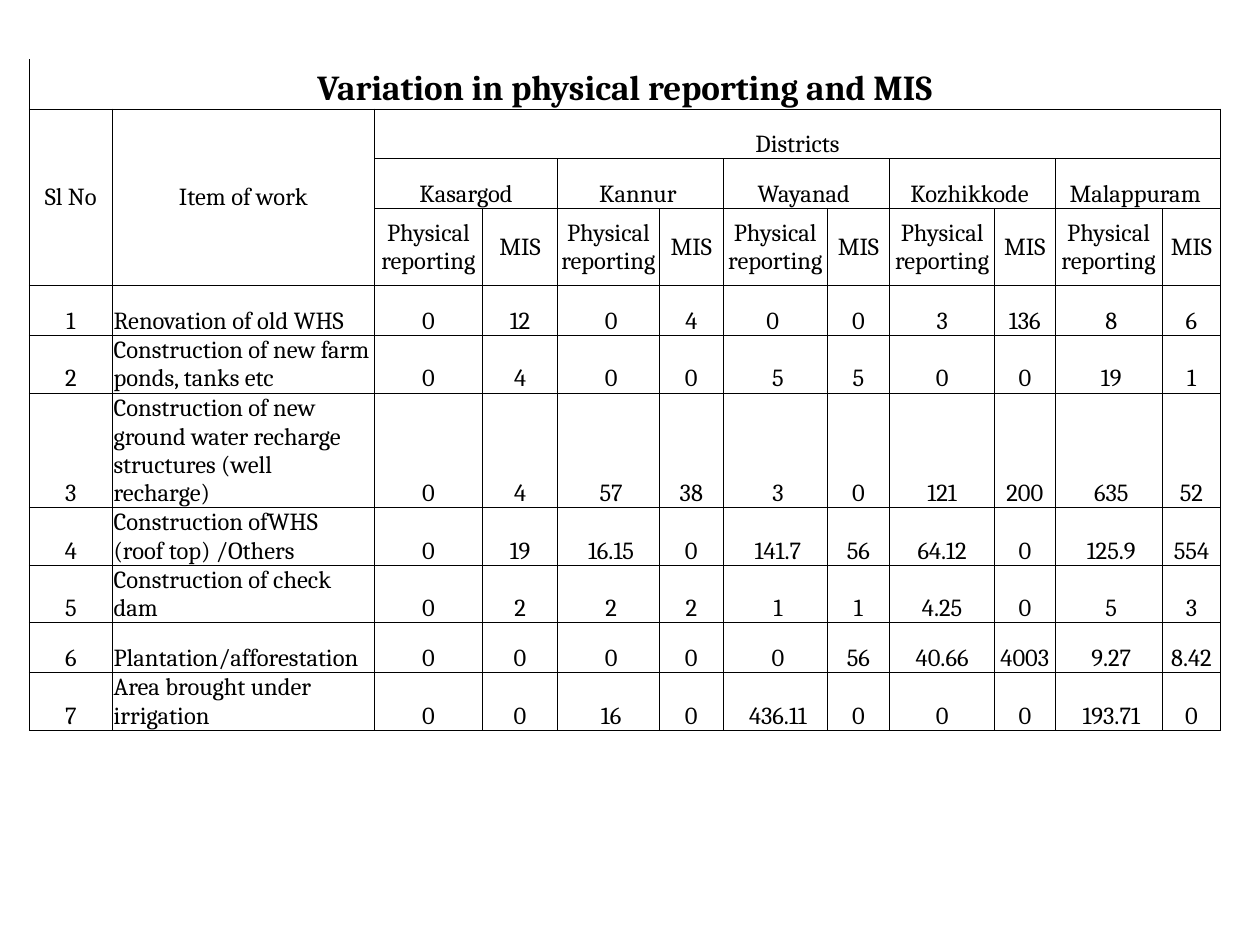
from dataclasses import dataclass

from lxml.etree import SubElement
from pptx import Presentation
from pptx.dml.color import RGBColor
from pptx.enum.text import MSO_ANCHOR, PP_ALIGN
from pptx.oxml.ns import qn
from pptx.table import Table, _Cell
from pptx.util import Pt

COLORS = {"text": "000000", "border": "000000"}
FONT_NAME = "Cambria"
BORDER_WIDTH = Pt(0.5)
COLUMN_WIDTHS = [47.5, 149.75, 61.75, 43, 58, 36.75, 59.25, 35.75, 60, 34.5, 61.25, 33.5]
LINE_HEIGHT = 16.35
SINGLE_ROW = 28.5
HEADING_ROWS = [SINGLE_ROW, SINGLE_ROW, SINGLE_ROW, 44]
DISTRICTS = ["Kasargod", "Kannur ", "Wayanad ", "Kozhikkode ", "Malappuram "]
MEASURES = ["Physical reporting", "MIS"]
FIRST_DISTRICT_COLUMN = 2


@dataclass
class Work:
    name: str
    lines: int
    values: list[str]

    @property
    def height(self) -> float:
        return max(SINGLE_ROW, self.lines * LINE_HEIGHT)


@dataclass
class Entry:
    row: int
    column: int
    text: str
    row_span: int = 1
    column_span: int = 1
    anchor: MSO_ANCHOR = MSO_ANCHOR.BOTTOM
    alignment: PP_ALIGN = PP_ALIGN.CENTER
    size: float = 14
    bold: bool = False


WORKS = [
    Work("Renovation of old WHS", 1,
         ["0", "12", " 0", "4", "0 ", "0", "3", "136", " 8", "6"]),
    Work("Construction of new farm ponds, tanks etc", 2,
         ["0", "4", " 0", "0", " 5", "5", "0", "0", " 19", "1"]),
    Work("Construction of new ground water recharge structures (well recharge)", 4,
         ["0", "4", " 57", "38", " 3", "0", "121", "200", " 635", "52"]),
    Work("Construction ofWHS (roof top) /Others", 2,
         ["0", "19", " 16.15", "0", " 141.7", "56", "64.12", "0", " 125.9", "554"]),
    Work("Construction of check dam", 2,
         ["0", "2", " 2", "2", " 1", "1", "4.25", "0", " 5", "3"]),
    Work("Plantation/afforestation", 1,
         ["0", "0", " 0", "0", " 0", "56", "40.66", "4003", " 9.27", "8.42"]),
    Work("Area brought under irrigation", 2,
         ["0", "0", " 16", "0", " 436.11", "0", "0", "0", " 193.71", "0"]),
]


def set_attributes(target: object, values: dict[str, object]) -> None:
    for name, value in values.items():
        setattr(target, name, value)


def set_borders(cell: _Cell, visible_sides: str) -> None:
    properties = cell._tc.get_or_add_tcPr()
    for side in "LRTB":
        line = SubElement(properties, qn(f"a:ln{side}"), w=str(BORDER_WIDTH))
        if side in visible_sides:
            fill = SubElement(line, qn("a:solidFill"))
            SubElement(fill, qn("a:srgbClr"), val=COLORS["border"])
        else:
            SubElement(line, qn("a:noFill"))


def format_grid(table: Table) -> None:
    for row_index, row in enumerate(table.rows):
        for column_index, cell in enumerate(row.cells):
            title_sides = "LB" if column_index == 0 else "B"
            set_borders(cell, "LRTB" if row_index else title_sides)
            cell.fill.background()


def write_entry(table: Table, entry: Entry) -> None:
    cell = table.cell(entry.row, entry.column)
    if entry.row_span > 1 or entry.column_span > 1:
        cell.merge(table.cell(entry.row + entry.row_span - 1,
                              entry.column + entry.column_span - 1))
    set_attributes(cell, {
        "margin_left": Pt(0.7), "margin_right": Pt(0.7), "margin_top": Pt(0.7),
        "margin_bottom": Pt(0), "vertical_anchor": entry.anchor,
    })
    paragraph = cell.text_frame.paragraphs[0]
    paragraph.alignment = entry.alignment
    run = paragraph.add_run()
    run.text = entry.text
    set_attributes(run.font, {"name": FONT_NAME, "size": Pt(entry.size), "bold": entry.bold})
    run.font.color.rgb = RGBColor.from_string(COLORS["text"])


def heading_entries() -> list[Entry]:
    middle = MSO_ANCHOR.MIDDLE
    entries = [
        Entry(0, 0, "Variation in physical reporting and MIS",
              column_span=len(COLUMN_WIDTHS), size=20, bold=True),
        Entry(1, 0, "Sl No", row_span=3, anchor=middle),
        Entry(1, 1, "Item of work", row_span=3, anchor=middle),
        Entry(1, FIRST_DISTRICT_COLUMN, "Districts",
              column_span=len(DISTRICTS) * len(MEASURES)),
    ]
    for index, district in enumerate(DISTRICTS):
        column = FIRST_DISTRICT_COLUMN + index * len(MEASURES)
        entries.append(Entry(2, column, district, column_span=len(MEASURES)))
        for offset, measure in enumerate(MEASURES):
            entries.append(Entry(3, column + offset, measure, anchor=middle))
    return entries


def work_entries() -> list[Entry]:
    entries = []
    for number, work in enumerate(WORKS, start=1):
        row = len(HEADING_ROWS) + number - 1
        entries.append(Entry(row, 0, str(number)))
        entries.append(Entry(row, 1, work.name, alignment=PP_ALIGN.LEFT))
        for column, value in enumerate(work.values, start=FIRST_DISTRICT_COLUMN):
            entries.append(Entry(row, column, value))
    return entries


def main() -> None:
    presentation = Presentation()
    set_attributes(presentation, {"slide_width": Pt(720), "slide_height": Pt(540)})
    slide = presentation.slides.add_slide(presentation.slide_layouts[6])
    row_heights = HEADING_ROWS + [work.height for work in WORKS]
    shape = slide.shapes.add_table(
        len(row_heights), len(COLUMN_WIDTHS),
        Pt(16.75), Pt(33.75), Pt(sum(COLUMN_WIDTHS)), Pt(sum(row_heights)))
    table = shape.table
    set_attributes(table, {"first_row": False, "horz_banding": False})
    for column, width in zip(table.columns, COLUMN_WIDTHS):
        column.width = Pt(width)
    for row, height in zip(table.rows, row_heights):
        row.height = Pt(height)
    format_grid(table)
    for entry in heading_entries() + work_entries():
        write_entry(table, entry)
    presentation.save("out.pptx")


if __name__ == "__main__":
    main()
